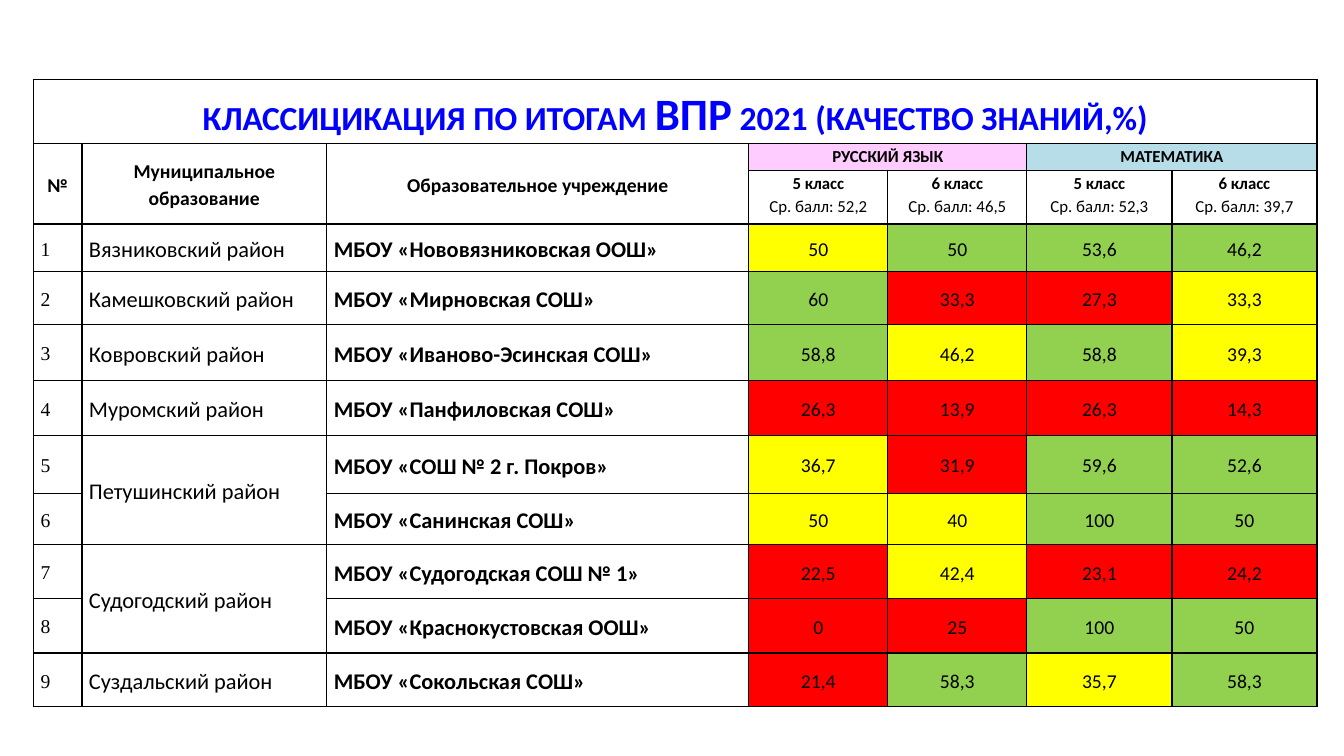
from lxml.etree import SubElement
from pptx import Presentation
from pptx.dml.color import RGBColor
from pptx.enum.text import MSO_ANCHOR, PP_ALIGN
from pptx.oxml.ns import qn
from pptx.util import Inches, Pt

COLUMNS = [0.48, 2.43, 4.19, 1.38, 1.38, 1.44, 1.44]
ROWS = [0.63, 0.27, 0.53, 0.47, 0.52, 0.56, 0.54, 0.57, 0.51, 0.53, 0.54, 0.53]
LEVELS = {"G": "92D050", "Y": "FFFF00", "R": "FF0000"}
MERGES = [(0, 0, 0, 6), (1, 0, 2, 0), (1, 1, 2, 1), (1, 2, 2, 2),
          (1, 3, 1, 4), (1, 5, 1, 6), (7, 1, 8, 1), (9, 1, 10, 1)]

TITLE = {"size": Pt(24), "bold": True, "color": "0000FF"}
TITLE_LARGE = {**TITLE, "size": Pt(32)}
HEADING = {"size": Pt(14), "bold": True}
SUBJECT = {"size": Pt(12), "bold": True}
AVERAGE = {"size": Pt(12), "bold": False}
NUMBER = {"size": Pt(14), "name": "Times New Roman"}
DISTRICT = {"size": Pt(16)}
SCHOOL = {"size": Pt(16), "bold": True}
SCORE = {"size": Pt(14)}

HEADINGS = ["№", "Муниципальное образование", "Образовательное учреждение"]
SUBJECTS = [(3, "РУССКИЙ ЯЗЫК", "FFCCFF"), (5, "МАТЕМАТИКА", "B6DDE8")]
CLASSES = [("5 класс", "52,2"), ("6 класс", "46,5"), ("5 класс", "52,3"), ("6 класс", "39,7")]
RESULTS = [
    ("Вязниковский район", "МБОУ «Нововязниковская ООШ»", "50 50 53,6 46,2", "YGGG"),
    ("Камешковский район", "МБОУ «Мирновская СОШ»", "60 33,3 27,3 33,3", "GRRY"),
    ("Ковровский район", "МБОУ «Иваново-Эсинская СОШ»", "58,8 46,2 58,8 39,3", "GYGY"),
    ("Муромский район", "МБОУ «Панфиловская СОШ»", "26,3 13,9 26,3 14,3", "RRRR"),
    ("Петушинский район", "МБОУ «СОШ № 2 г. Покров»", "36,7 31,9 59,6 52,6", "YRGG"),
    (None, "МБОУ «Санинская СОШ»", "50 40 100 50", "YYGG"),
    ("Судогодский район", "МБОУ «Судогодская СОШ № 1»", "22,5 42,4 23,1 24,2", "RYRR"),
    (None, "МБОУ «Краснокустовская ООШ»", "0 25 100 50", "RRGG"),
    ("Суздальский район", "МБОУ «Сокольская СОШ»", "21,4 58,3 35,7 58,3", "RGYG"),
]


def rgb(value):
    """Turn a hex string into a colour."""
    return RGBColor.from_string(value)


def shares(length, weights):
    """Split a length in proportion to the weights."""
    return [round(length * weight / sum(weights)) for weight in weights]


def style_span(span, style):
    """Apply a dict of font values to a run."""
    values = {"name": "Calibri", "bold": False, "color": "000000", **style}
    span.font.color.rgb = rgb(values.pop("color"))
    for name, value in values.items():
        setattr(span.font, name, value)


def write(cell, *lines, align=PP_ALIGN.CENTER, anchor=MSO_ANCHOR.MIDDLE, after=0):
    """Write lines, each a list of text and style pairs, into a cell."""
    cell.vertical_anchor = anchor
    frame = cell.text_frame
    for index, line in enumerate(lines):
        para = frame.add_paragraph() if index else frame.paragraphs[0]
        layout = {"alignment": align, "line_spacing": 1.15,
                  "space_before": Pt(0), "space_after": Pt(after)}
        for name, value in layout.items():
            setattr(para, name, value)
        for text, style in line:
            span = para.add_run()
            span.text = text
            style_span(span, style)


def paint(cell, color):
    """Fill a cell with one colour."""
    cell.fill.solid()
    cell.fill.fore_color.rgb = rgb(color)


def outline(cell):
    """Draw a thin black border on all four sides of a cell."""
    properties = cell._tc.get_or_add_tcPr()
    for index, side in enumerate(("lnL", "lnR", "lnT", "lnB")):
        line = SubElement(properties, qn(f"a:{side}"), w=str(Pt(1)))
        SubElement(SubElement(line, qn("a:solidFill")), qn("a:srgbClr"), val="000000")
        properties.insert(index, line)


def add_grid(page, deck):
    """Add the bordered and merged empty table."""
    width, height = deck.slide_width, deck.slide_height
    frame = page.shapes.add_table(
        len(ROWS), len(COLUMNS), round(width * 0.025), round(height * 0.105),
        round(width * 0.955), round(height * 0.83))
    table = frame.table
    table.first_row = table.horz_banding = False
    for column, size in zip(table.columns, shares(frame.width, COLUMNS)):
        column.width = size
    for row, size in zip(table.rows, shares(frame.height, ROWS)):
        row.height = size
    margins = {"margin_left": Inches(0.07), "margin_right": Inches(0.07),
               "margin_top": 0, "margin_bottom": 0}
    for cell in table.iter_cells():
        for name, value in margins.items():
            setattr(cell, name, value)
        cell.fill.background()
        outline(cell)
    for top, left, bottom, right in MERGES:
        table.cell(top, left).merge(table.cell(bottom, right))
    return table


def fill_header(table):
    """Write the title, headings, subjects and class averages."""
    write(table.cell(0, 0), [("КЛАССИЦИКАЦИЯ ПО ИТОГАМ ", TITLE), ("ВПР", TITLE_LARGE),
                             (" 2021 (КАЧЕСТВО ЗНАНИЙ,%)", TITLE)],
          anchor=MSO_ANCHOR.TOP, after=6)
    for column, heading in enumerate(HEADINGS):
        write(table.cell(1, column), [(heading, HEADING)])
    for column, subject, color in SUBJECTS:
        write(table.cell(1, column), [(subject, SUBJECT)], anchor=MSO_ANCHOR.TOP)
        paint(table.cell(1, column), color)
    for column, (grade, average) in enumerate(CLASSES, 3):
        write(table.cell(2, column), [(grade, SUBJECT)],
              [(f"Ср. балл: {average}", AVERAGE)], anchor=MSO_ANCHOR.TOP)


def fill_results(table):
    """Write one row per school with its coloured scores."""
    for number, (district, school, scores, levels) in enumerate(RESULTS, 1):
        row = number + 2
        labels = [(str(number), NUMBER), (district, DISTRICT), (school, SCHOOL)]
        for column, label in enumerate(labels):
            if label[0]:
                write(table.cell(row, column), [label], align=PP_ALIGN.LEFT)
        for column, (score, level) in enumerate(zip(scores.split(), levels), 3):
            write(table.cell(row, column), [(score, SCORE)])
            paint(table.cell(row, column), LEVELS[level])


def main():
    """Build the slide and save it."""
    deck = Presentation()
    deck.slide_width, deck.slide_height = Inches(13.33), Inches(7.5)
    page = deck.slides.add_slide(deck.slide_layouts[6])
    table = add_grid(page, deck)
    fill_header(table)
    fill_results(table)
    deck.save("out.pptx")


if __name__ == "__main__":
    main()
